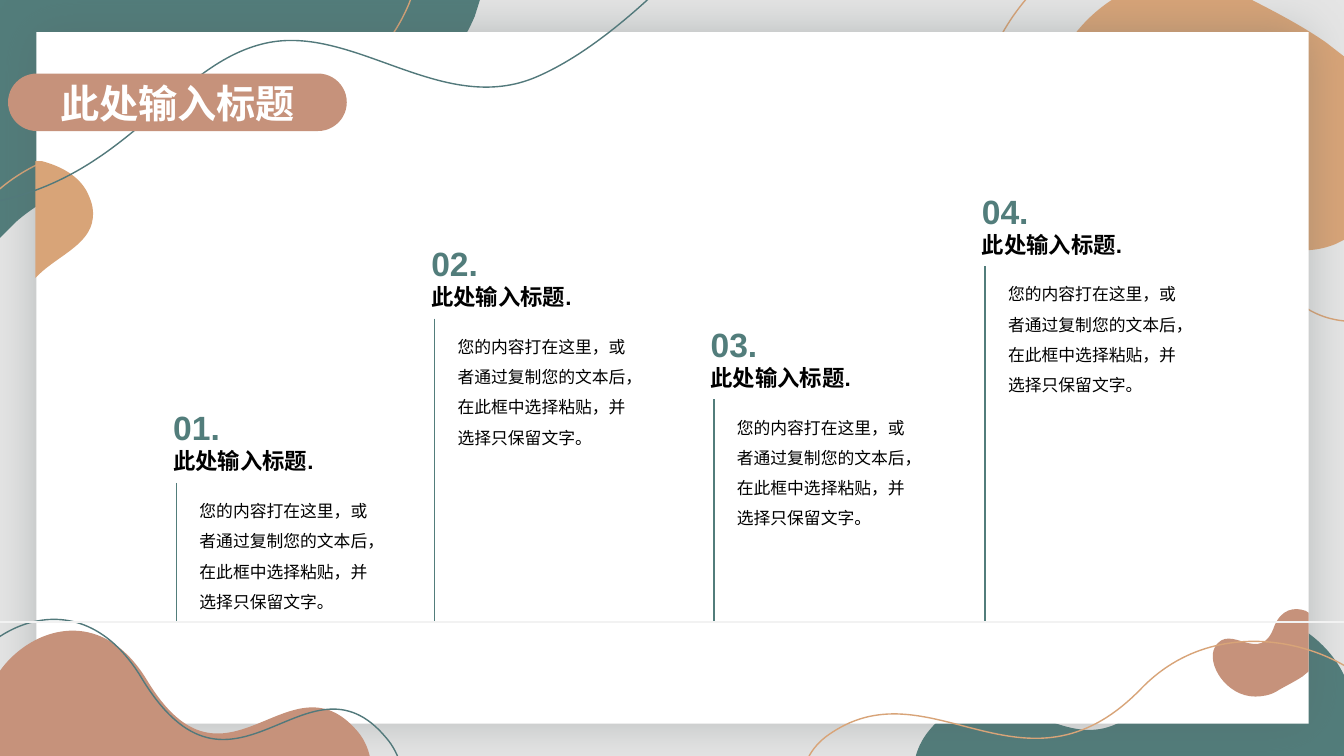
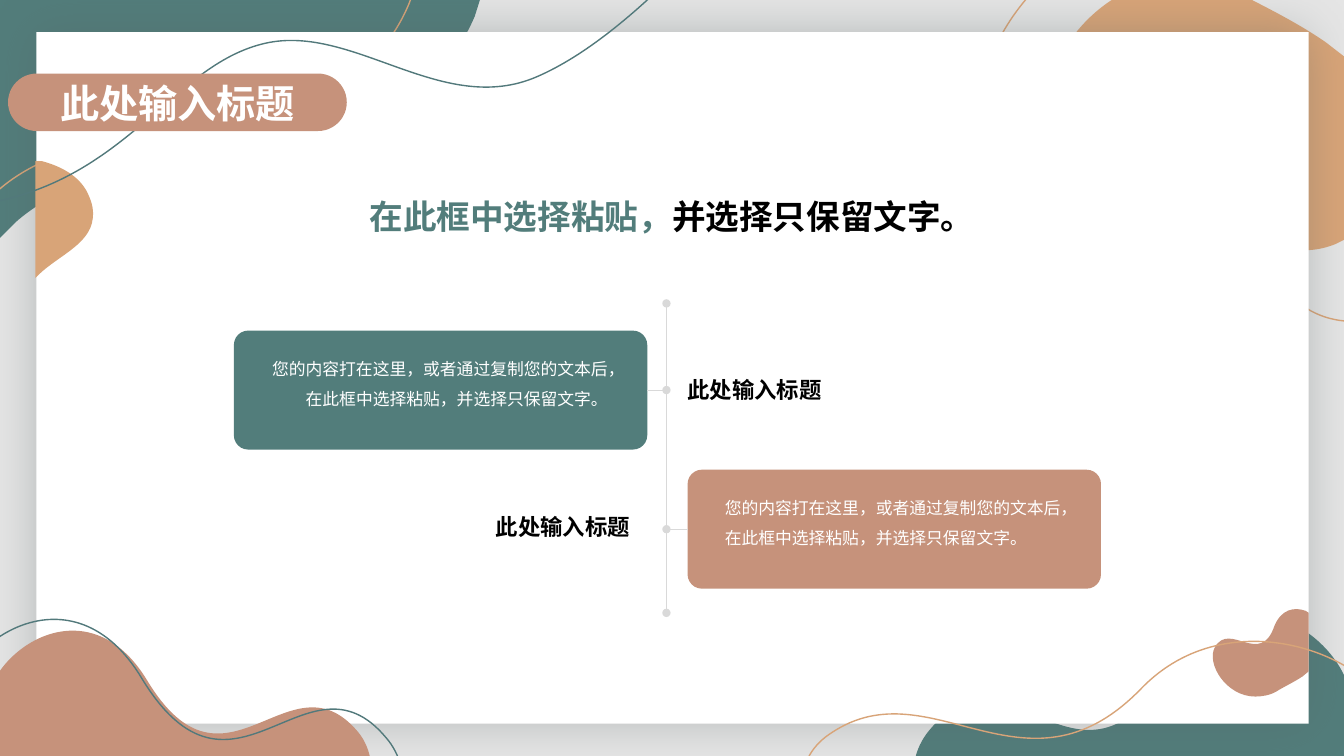
from lxml import etree
from pptx import Presentation
from pptx.dml.color import RGBColor
from pptx.enum.shapes import MSO_CONNECTOR, MSO_SHAPE
from pptx.enum.text import MSO_ANCHOR, MSO_AUTO_SIZE, PP_ALIGN
from pptx.oxml.ns import qn
from pptx.util import Inches, Pt

RECT, ROUNDED = MSO_SHAPE.RECTANGLE, MSO_SHAPE.ROUNDED_RECTANGLE
STRAIGHT = MSO_CONNECTOR.STRAIGHT
LEFT, CENTER, RIGHT = PP_ALIGN.LEFT, PP_ALIGN.CENTER, PP_ALIGN.RIGHT
TOP, BOTTOM = MSO_ANCHOR.TOP, MSO_ANCHOR.BOTTOM
FIT, FIXED = MSO_AUTO_SIZE.SHAPE_TO_FIT_TEXT, MSO_AUTO_SIZE.NONE
LEFT_SIDE, RIGHT_SIDE = 1, 3

FONT = "Arial"
WIDTH, HEIGHT = 13.33, 7.5
TEAL, ROSE, SAND, INK_LINE = "527D7B", "C6927B", "D8A478", "52797B"
BLACK, WHITE, GREY, RULE, BACKDROP = "000000", "FFFFFF", "D9D9D9", "F2F2F2", "808080"
SHADOW = "566363"

TITLE = "此处输入标题"
BODY = "您的内容打在这里，或者通过复制您的文本后，在此框中选择粘贴，并选择只保留文字。"

# Outlines in inches on the slide: M start, C cubic curve, L line, Z close.
BEHIND_PANEL = [
    ("M 13.34 7.51 C 13.4 7.33 13.43 7.14 13.4 6.92 C 13.31 6.29 12.24 5.56 11.59 6.65 "
     "C 10.71 8.1 10 6.31 9.23 7.23 C 9.16 7.31 9.11 7.4 9.08 7.51 Z", {"fill": TEAL}),
    ("M 0 0 L 4.76 0 L 4.71 0.16 C 4.4 0.89 3.65 1.46 2.25 1.55 "
     "C 1.19 1.62 0.54 1.86 0.15 2.21 L 0 2.36 Z", {"fill": TEAL}),
    ("M 11.69 -0.21 C 10.8 -0.19 10.18 0.81 10.47 1.3 C 10.93 2.12 11.84 0.68 12.3 1.96 "
     "C 12.49 2.49 12.9 2.56 13.25 2.42 L 13.33 2.38 L 13.33 0.56 L 13.15 0.42 "
     "C 12.86 0.22 12.55 0.07 12.34 -0.04 C 12.12 -0.16 11.9 -0.21 11.69 -0.21 Z",
     {"fill": SAND}),
    ("M 11.61 -0.72 C 10.31 -0.7 9.42 0.76 9.83 1.48 C 10.51 2.67 11.82 0.57 12.49 2.42 "
     "C 12.77 3.2 13.36 3.3 13.87 3.1 L 13.99 3.04 L 13.99 0.39 L 13.73 0.19 "
     "C 13.31 -0.1 12.85 -0.32 12.56 -0.48 C 12.22 -0.65 11.9 -0.73 11.61 -0.72 Z",
     {"line": SAND}),
    ("M -0.15 -0.11 L 4.11 -0.11 L 4.06 0.03 C 3.79 0.69 3.11 1.21 1.86 1.29 "
     "C 0.91 1.36 0.33 1.58 -0.02 1.89 L -0.15 2.03 Z", {"line": SAND}),
]
OVER_PANEL = [
    ("M -0.08 7.51 C -0.15 7.35 -0.17 7.18 -0.14 6.99 C -0.07 6.43 0.88 5.79 1.46 6.75 "
     "C 2.24 8.04 2.87 6.45 3.55 7.26 C 3.61 7.33 3.65 7.42 3.67 7.51 Z", {"fill": ROSE}),
    ("M 0.92 2.17 C 0.89 2.44 0.54 2.55 0.35 2.76 L 0.35 1.6 L 0.42 1.6 "
     "C 0.64 1.66 0.81 1.77 0.88 1.94 C 0.92 2.03 0.93 2.1 0.92 2.17 Z", {"fill": SAND}),
    ("M -0.41 7.61 C -0.48 7.43 -0.51 7.22 -0.48 7 C -0.39 6.35 0.72 5.6 1.4 6.72 "
     "C 2.31 8.23 3.04 6.37 3.83 7.32 C 3.9 7.4 3.95 7.5 3.98 7.61 Z", {"line": INK_LINE}),
    ("M -4.79 2.32 C -2.97 2.3 -1.14 2.28 0.09 1.97 C 1.33 1.65 1.76 0.63 2.63 0.43 "
     "C 3.51 0.23 4.39 1.17 5.33 0.76 C 6.27 0.35 7.28 -0.85 8.28 -2.05",
     {"line": INK_LINE}),
    ("M 12.45 6.91 C 12.16 6.91 11.96 6.58 12.05 6.42 C 12.2 6.16 12.5 6.62 12.64 6.21 "
     "C 12.71 6.04 12.84 6.02 12.95 6.06 L 12.98 6.08 L 12.98 6.66 L 12.92 6.71 "
     "C 12.83 6.77 12.72 6.82 12.66 6.86 C 12.59 6.9 12.51 6.91 12.45 6.91 Z",
     {"fill": ROSE}),
    ("M 13.65 7.55 C 13.74 7.4 13.78 7.24 13.74 7.05 C 13.62 6.53 12.2 5.92 11.32 6.83 "
     "C 10.15 8.04 9.21 6.55 8.19 7.31 C 8.1 7.38 8.04 7.46 8 7.55 Z", {"line": SAND}),
]


def color(hex_code):
    return RGBColor.from_string(hex_code)


def paint(shape, fill=None, line=None):
    shape.shadow.inherit = False
    if fill:
        shape.fill.solid()
        shape.fill.fore_color.rgb = color(fill)
    else:
        shape.fill.background()
    if line:
        shape.line.color.rgb = color(line)
        shape.line.width = Pt(1)
    else:
        shape.line.fill.background()


def add_box(shapes, kind, left, top, width, height, fill, corner=None):
    box = shapes.add_shape(kind, Inches(left), Inches(top), Inches(width), Inches(height))
    paint(box, fill)
    if corner is not None:
        box.adjustments[0] = corner
    return box


def add_text(shapes, left, top, width, height, spans, size=12, bold=False, align=LEFT,
             anchor=TOP, wrap=True, fit=FIT, spacing=None, after=None):
    """Add one paragraph of (text, colour) spans."""
    box = shapes.add_textbox(Inches(left), Inches(top), Inches(width), Inches(height))
    frame = box.text_frame
    frame.word_wrap, frame.auto_size, frame.vertical_anchor = wrap, fit, anchor
    para = frame.paragraphs[0]
    para.alignment = align
    if spacing:
        para.line_spacing = spacing
    if after:
        para.space_after = Pt(after)
    for text, hex_code in spans:
        span = para.add_run()
        span.text = text
        span.font.name, span.font.size, span.font.bold = FONT, Pt(size), bold
        span.font.color.rgb = color(hex_code)


def add_line(shapes, start, end, hex_code, width, head=False, tail=False):
    """Add a straight line; head and tail put a dot at its start and end."""
    line = shapes.add_connector(STRAIGHT, *(Inches(value) for value in (*start, *end)))
    line.line.color.rgb = color(hex_code)
    line.line.width = Pt(width)
    properties = line._element.spPr
    for wanted, tag in ((head, "a:headEnd"), (tail, "a:tailEnd")):
        if wanted:
            etree.SubElement(properties.find(qn("a:ln")), qn(tag), type="oval")
    etree.SubElement(properties, qn("a:effectLst"))
    return line


def add_outline(shapes, outline, **look):
    """Build a freeform through every point, then bend each C triple into a cubic."""
    points, commands, numbers = [], [], []
    for token in outline.split():
        if token.isalpha():
            commands.append(token)
        else:
            numbers.append(Inches(float(token)))
    points = list(zip(numbers[::2], numbers[1::2]))
    builder = shapes.build_freeform(*points[0])
    builder.add_line_segments(points[1:], close="Z" in commands)
    shape = builder.convert_to_shape()
    segments = iter(list(shape._element.iter(qn("a:lnTo"))))
    for command in commands:
        if command == "L":
            next(segments)
        elif command == "C":
            first = next(segments)
            curve = etree.Element(qn("a:cubicBezTo"))
            first.addprevious(curve)
            for segment in (first, next(segments), next(segments)):
                curve.append(segment[0])
                segment.getparent().remove(segment)
    paint(shape, **look)


def add_panel(shapes):
    panel = add_box(shapes, RECT, 0.36, 0.32, 12.62, 6.86, WHITE)
    effects = panel._element.spPr.find(qn("a:effectLst"))
    shadow = etree.SubElement(effects, qn("a:outerShdw"), blurRad=str(Pt(35)), dist="0",
                              algn="ctr", rotWithShape="0")
    tint = etree.SubElement(shadow, qn("a:srgbClr"), val=SHADOW)
    etree.SubElement(tint, qn("a:alpha"), val="35000")


def decorate_layout(page):
    """Draw the shared backdrop and move it into the layout of the page."""
    layout = page.slide_layout
    for placeholder in list(layout.placeholders):
        layout.shapes._spTree.remove(placeholder._element)
    backdrop = add_box(page.shapes, RECT, 0, 0, WIDTH, HEIGHT, BACKDROP)
    tint = backdrop._element.spPr.find(qn("a:solidFill"))[0]
    etree.SubElement(tint, qn("a:alpha"), val="20000")
    for outline, look in BEHIND_PANEL:
        add_outline(page.shapes, outline, **look)
    add_panel(page.shapes)
    for outline, look in OVER_PANEL:
        add_outline(page.shapes, outline, **look)
    for shape in list(page.shapes):
        layout.shapes._spTree.append(shape._element)


def add_title(page, left=0.08, top=0.73):
    shapes = page.shapes.add_group_shape().shapes
    add_box(shapes, ROUNDED, left, top, 3.36, 0.57, ROSE, corner=0.5)
    add_text(shapes, left + 0.29, top + 0.01, 2.78, 0.57, [(TITLE, WHITE)], size=28,
             bold=True, align=CENTER, after=1.1)


def add_step(shapes, number, left, top, ground):
    """Add a numbered step whose stem reaches down to the ground."""
    stem = left + 0.13
    add_line(shapes, (stem, top + 0.8), (stem, ground), TEAL, 1.25)
    add_text(shapes, left, top + 0.4, 1.64, 0.37, [(TITLE + ".", BLACK)], size=16,
             bold=True, wrap=False)
    add_text(shapes, left, top, 0.67, 0.5, [(f"{number:02}.", TEAL)], size=24,
             bold=True, wrap=False)
    add_text(shapes, left + 0.26, top + 0.83, 1.91, 1.28, [(BODY, BLACK)], spacing=1.5)


def fill_steps_page(page):
    ground = 6.17
    add_title(page)
    steps = page.shapes.add_group_shape().shapes
    places = [(1.62, 3.99), (4.18, 2.36), (6.95, 3.16), (9.64, 1.84)]
    for number, (left, top) in enumerate(places, 1):
        add_step(steps, number, left, top, ground)
    add_line(page.shapes, (WIDTH, ground), (0, ground), RULE, 1.25)


def add_card(shapes, left, top, fill, align):
    card = add_box(shapes, ROUNDED, left, top, 4.1, 1.18, fill, corner=0.12)
    add_text(shapes, left + 0.27, top + 0.13, 3.54, 0.89, [(BODY, WHITE)], align=align,
             fit=FIXED, spacing=1.5)
    return card


def fill_timeline_page(page):
    axis, card_top, card_middle = 6.61, (3.28, 4.66), 0.59
    upper, lower = (top + card_middle for top in card_top)
    shapes = page.shapes
    add_title(page)

    teal_card = add_card(shapes, 2.32, card_top[0], TEAL, RIGHT)
    rose_card = add_card(shapes, 6.82, card_top[1], ROSE, LEFT)
    add_text(shapes, 6.72, 3.68, 1.85, 0.37, [(TITLE, BLACK)], size=16, bold=True)
    add_text(shapes, 4.82, 5.04, 1.69, 0.37, [(TITLE, BLACK)], size=16, bold=True)

    link = add_line(shapes, (6.42, upper), (axis, upper), GREY, 0.5, tail=True)
    link.begin_connect(teal_card, RIGHT_SIDE)
    link = add_line(shapes, (axis, lower), (6.82, lower), GREY, 0.5)
    link.end_connect(rose_card, LEFT_SIDE)
    add_line(shapes, (axis, 3.01), (axis, lower), GREY, 0.5, head=True, tail=True)
    add_line(shapes, (axis, lower), (axis, 6.08), GREY, 0.5, tail=True)

    add_text(shapes, 0.97, 1.35, 11.39, 1.04,
             [("在此框中选择粘贴，", TEAL), ("并选择只保留文字。", BLACK)],
             size=24, bold=True, align=CENTER, anchor=BOTTOM, fit=FIXED)


def main():
    deck = Presentation()
    deck.slide_width, deck.slide_height = Inches(WIDTH), Inches(HEIGHT)
    blank = deck.slide_layouts[6]
    pages = [deck.slides.add_slide(blank) for _ in range(2)]
    decorate_layout(pages[0])
    fill_steps_page(pages[0])
    fill_timeline_page(pages[1])
    deck.save("out.pptx")


if __name__ == "__main__":
    main()
